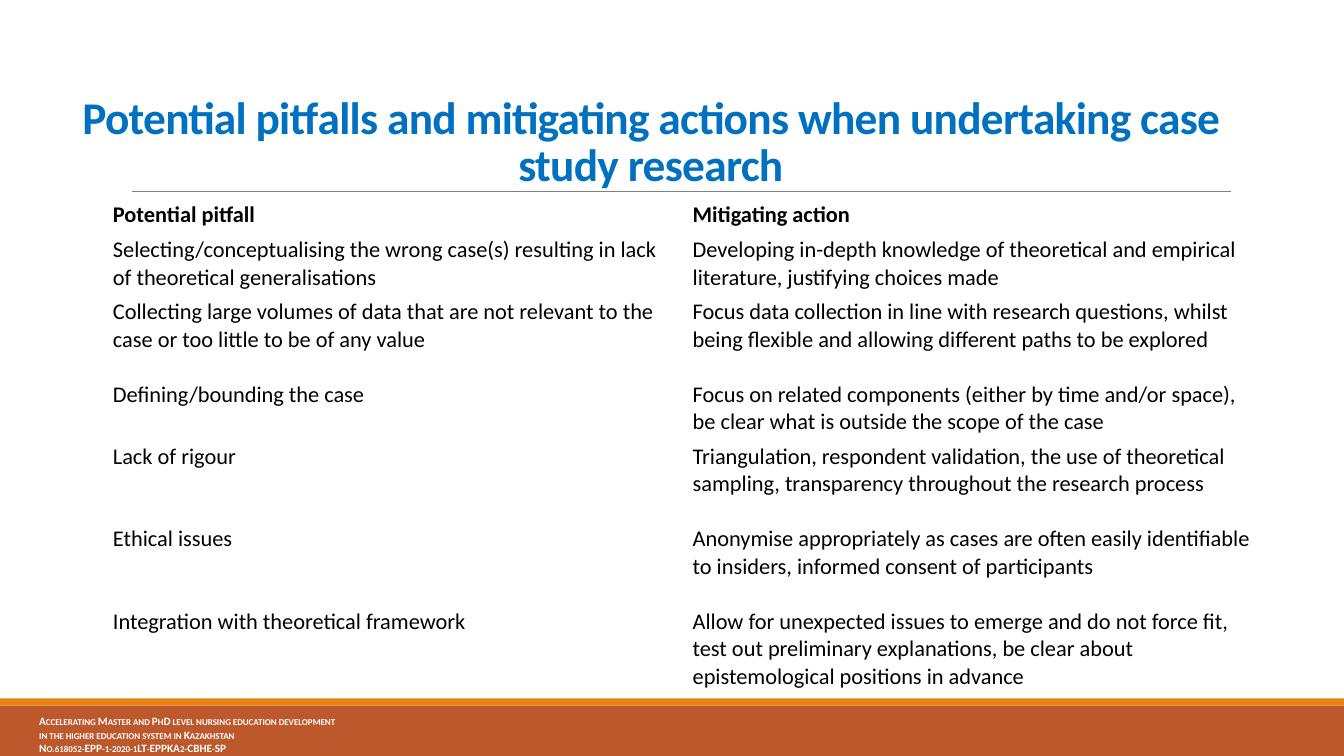
from dataclasses import dataclass

import pptx
import pptx.dml.color
import pptx.enum.shapes
import pptx.enum.text
import pptx.oxml.ns
import pptx.slide
import pptx.text.text
import pptx.util
from lxml import etree

Inches = pptx.util.Inches
Pt = pptx.util.Pt
RGB = pptx.dml.color.RGBColor


@dataclass(frozen=True)
class Theme:
    font: str = "Calibri"
    title_size: float = 32.4
    table_size: float = 16
    footer_size: float = 8
    title: RGB = RGB(0x00, 0x70, 0xC0)
    body: RGB = RGB(0x00, 0x00, 0x00)
    footer: RGB = RGB(0xFF, 0xFF, 0xFF)
    rule: RGB = RGB(0x80, 0x80, 0x80)
    band: RGB = RGB(0xBD, 0x58, 0x2C)
    stripe: RGB = RGB(0xE4, 0x83, 0x12)


@dataclass(frozen=True)
class Bar:
    top: float
    height: float
    color: RGB


@dataclass(frozen=True)
class Row:
    height: float
    pitfall: str
    action: str


THEME = Theme()
PAGE_WIDTH, PAGE_HEIGHT = 13.33, 7.5
COLUMN_WIDTH = 5.75
BARS = [Bar(7, 0.5, THEME.band), Bar(6.93, 0.07, THEME.stripe)]
TITLE = "Potential pitfalls and mitigating actions when undertaking case study research"
FOOTER = [
    "Accelerating Master and PhD level nursing education development",
    "in the higher education system in Kazakhstan",
    "No.618052-EPP-1-2020-1LT-EPPKA2-CBHE-SP",
]
ROWS = [
    Row(0.33, "Potential pitfall", "Mitigating action"),
    Row(0.57, "Selecting/conceptualising the wrong case(s) resulting in lack of theoretical generalisations",
        "Developing in-depth knowledge of theoretical and empirical literature, justifying choices made"),
    Row(0.82, "Collecting large volumes of data that are not relevant to the case or too little to be of any value",
        "Focus data collection in line with research questions, whilst being flexible and allowing "
        "different paths to be explored"),
    Row(0.57, "Defining/bounding the case",
        "Focus on related components (either by time and/or space), be clear what is outside the scope of the case"),
    Row(0.82, "Lack of rigour",
        "Triangulation, respondent validation, the use of theoretical sampling, transparency throughout "
        "the research process"),
    Row(0.82, "Ethical issues",
        "Anonymise appropriately as cases are often easily identifiable to insiders, informed consent of participants"),
    Row(0.82, "Integration with theoretical framework",
        "Allow for unexpected issues to emerge and do not force fit, test out preliminary explanations, "
        "be clear about epistemological positions in advance"),
]


def style_paragraph(para: pptx.text.text._Paragraph, size: float, color: RGB, bold: bool, **extras: str) -> None:
    """Set the paragraph font; extras are further character attributes."""
    font = para.font
    font.name, font.size, font.bold = THEME.font, Pt(size), bold
    font.color.rgb = color
    for name, value in extras.items():
        para._p.pPr.defRPr.set(name, value)


def draw_bar(page: pptx.slide.Slide, bar: Bar) -> None:
    shape = page.shapes.add_shape(
        pptx.enum.shapes.MSO_SHAPE.RECTANGLE, 0, Inches(bar.top), Inches(PAGE_WIDTH), Inches(bar.height))
    shape.shadow.inherit = False
    shape.fill.solid()
    shape.fill.fore_color.rgb = bar.color
    shape.line.fill.background()


def draw_rule(page: pptx.slide.Slide) -> None:
    rule = page.shapes.add_connector(
        pptx.enum.shapes.MSO_CONNECTOR.STRAIGHT, Inches(1.31), Inches(1.9), Inches(12.21), Inches(1.9))
    rule.line.color.rgb = THEME.rule
    rule.line.width = Pt(0.5)
    etree.SubElement(rule._element.spPr, pptx.oxml.ns.qn("a:effectLst"))


def draw_footer(page: pptx.slide.Slide) -> None:
    box = page.shapes.add_textbox(Inches(0.29), Inches(7.04), Inches(4.59), Inches(0.46))
    frame = box.text_frame
    frame.word_wrap = True
    frame.text = "\n".join(FOOTER)
    for para in frame.paragraphs:
        style_paragraph(para, THEME.footer_size, THEME.footer, True, cap="small")


def fill_title(page: pptx.slide.Slide) -> None:
    title = page.shapes.title
    title.left, title.top = Inches(0.29), Inches(1.06)
    title.width, title.height = Inches(12.33), Inches(0.88)
    frame = title.text_frame
    frame.text = TITLE
    frame.word_wrap = True
    frame.auto_size = pptx.enum.text.MSO_AUTO_SIZE.NONE
    frame.vertical_anchor = pptx.enum.text.MSO_ANCHOR.BOTTOM
    para = frame.paragraphs[0]
    para.alignment = pptx.enum.text.PP_ALIGN.CENTER
    para.line_spacing = 0.85
    style_paragraph(para, THEME.title_size, THEME.title, True, spc="-50")


def draw_table(page: pptx.slide.Slide) -> None:
    height = sum(row.height for row in ROWS)
    table = page.shapes.add_table(
        len(ROWS), 2, Inches(1.04), Inches(1.96), Inches(2 * COLUMN_WIDTH), Inches(height)).table
    table.horz_banding = table.first_row = False
    for row_index, row in enumerate(ROWS):
        table.rows[row_index].height = Inches(row.height)
        for column_index, text in enumerate((row.pitfall, row.action)):
            cell = table.cell(row_index, column_index)
            cell.fill.background()
            cell.margin_left = cell.margin_right = Inches(0.08)
            cell.margin_top = cell.margin_bottom = Inches(0.04)
            cell.text = text
            style_paragraph(cell.text_frame.paragraphs[0], THEME.table_size, THEME.body, row_index == 0)


def main() -> None:
    deck = pptx.Presentation()
    deck.slide_width, deck.slide_height = Inches(PAGE_WIDTH), Inches(PAGE_HEIGHT)
    page = deck.slides.add_slide(deck.slide_layouts.get_by_name("Title Only"))
    for bar in BARS:
        draw_bar(page, bar)
    draw_rule(page)
    draw_footer(page)
    fill_title(page)
    draw_table(page)
    deck.save("out.pptx")


if __name__ == "__main__":
    main()
